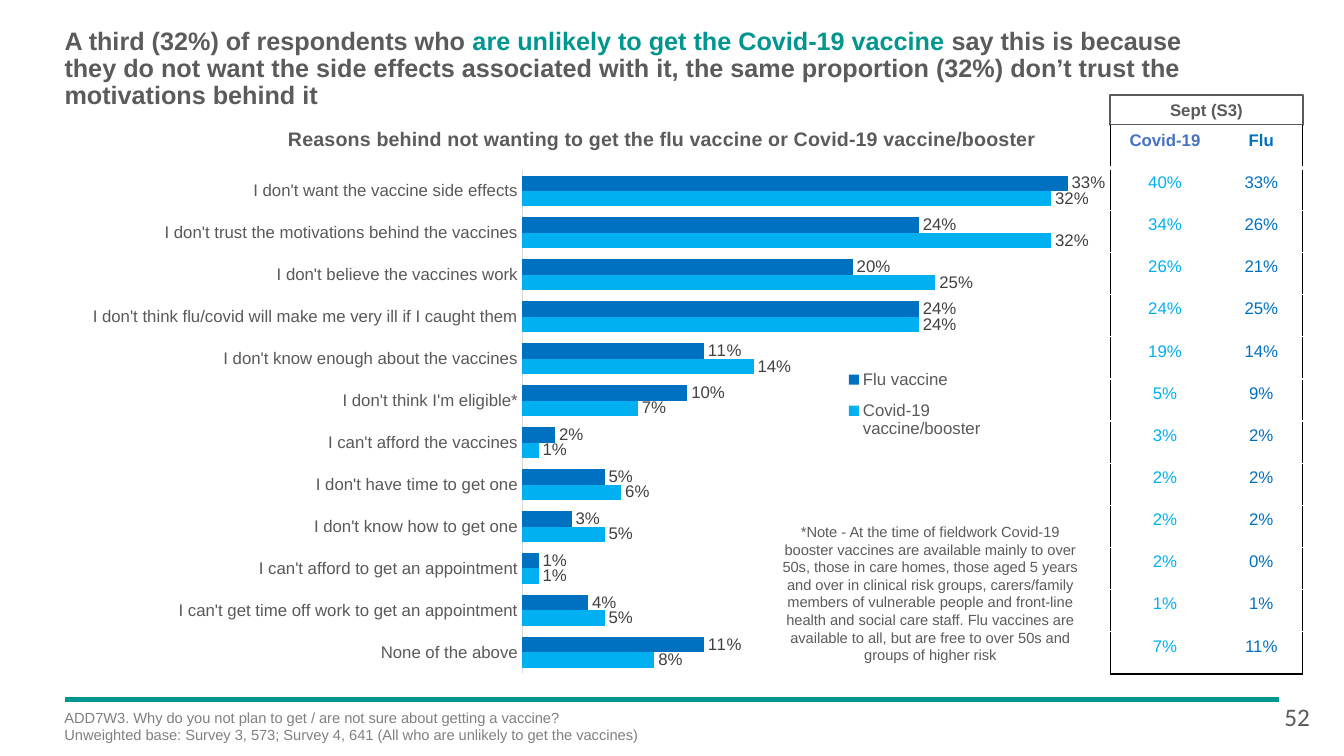
from dataclasses import dataclass

from lxml import etree
from pptx import Presentation
from pptx.chart.data import CategoryChartData
from pptx.dml.color import RGBColor
from pptx.enum.chart import XL_CHART_TYPE, XL_LABEL_POSITION, XL_LEGEND_POSITION, XL_TICK_MARK
from pptx.enum.shapes import MSO_CONNECTOR, MSO_SHAPE
from pptx.enum.text import MSO_ANCHOR, PP_ALIGN
from pptx.oxml import parse_xml
from pptx.oxml.ns import nsdecls, qn
from pptx.util import Inches, Pt

LEFT, CENTER = PP_ALIGN.LEFT, PP_ALIGN.CENTER
TOP, MIDDLE = MSO_ANCHOR.TOP, MSO_ANCHOR.MIDDLE
BAR = XL_CHART_TYPE.BAR_CLUSTERED
OUTSIDE = XL_LABEL_POSITION.OUTSIDE_END
BOTTOM = XL_LEGEND_POSITION.BOTTOM
NO_TICK = XL_TICK_MARK.NONE


@dataclass
class Theme:
    font: str = "Arial"
    number_font: str = "Calibri"
    ink: str = "5C5B5A"
    teal: str = "009690"
    flu: str = "0070C0"
    covid: str = "00B0F0"
    covid_head: str = "4472C4"
    grey: str = "808080"
    axis_text: str = "595959"
    label_text: str = "404040"
    axis_line: str = "D9D9D9"
    white: str = "FFFFFF"
    black: str = "000000"
    title: float = 18
    heading: float = 14
    body: float = 12
    small: float = 10.5


THEME = Theme()


def set_font(font, size=THEME.body, color=THEME.ink, bold=False, name=THEME.font):
    font.size, font.bold, font.name = Pt(size), bold, name
    font.color.rgb = RGBColor.from_string(color)


def write(tf, text, align=LEFT, spacing=None, **style):
    """Write lines of text, each a string or a list of (text, colour) runs."""
    for i, line in enumerate([text] if isinstance(text, str) else text):
        p = tf.paragraphs[0] if i == 0 else tf.add_paragraph()
        p.alignment = align
        if spacing:
            p.line_spacing = spacing
        for part, color in [(line, None)] if isinstance(line, str) else line:
            r = p.add_run()
            r.text = part
            set_font(r.font, **({**style, "color": color} if color else style))


def place(element, index, x, y, w=None, h=None, inner=False):
    for old in element.findall(qn("c:layout")):
        element.remove(old)
    values = [("layoutTarget", "inner")] if inner else []
    values += [("xMode", "edge"), ("yMode", "edge"), ("x", x), ("y", y)]
    values += [("w", w), ("h", h)] if w else []
    items = "".join(f'<c:{tag} val="{value}"/>' for tag, value in values)
    element.insert(index, parse_xml(
        f'<c:layout {nsdecls("c")}><c:manualLayout>{items}</c:manualLayout></c:layout>'))


class SurveySlide:
    """Draw survey elements at percentages of the slide's width and height."""

    def __init__(self, prs, theme):
        self.prs, self.theme = prs, theme
        self.s = prs.slides.add_slide(prs.slide_layouts[6])

    def span(self, *shares):
        sides = (self.prs.slide_width, self.prs.slide_height) * 2
        return [round(side * share / 100) for side, share in zip(sides, shares)]

    def text(self, area, text, insets=(0.1, 0.05, 0.1, 0.05), anchor=TOP, **style):
        tf = self.s.shapes.add_textbox(*self.span(*area)).text_frame
        tf.word_wrap, tf.vertical_anchor = True, anchor
        tf.margin_left, tf.margin_top, tf.margin_right, tf.margin_bottom = map(Inches, insets)
        write(tf, text, **style)

    def rule(self, *ends):
        sp = self.s.shapes.add_connector(MSO_CONNECTOR.STRAIGHT, *self.span(*ends))
        sp.line.color.rgb = RGBColor.from_string(self.theme.teal)
        sp.line.width = Pt(3)
        etree.SubElement(sp._element.spPr, qn("a:effectLst"))

    def frame(self, area, text):
        sp = self.s.shapes.add_shape(MSO_SHAPE.RECTANGLE, *self.span(*area))
        sp.shadow.inherit = False
        sp.fill.background()
        sp.line.color.rgb = RGBColor.from_string(self.theme.ink)
        sp.line.width = Pt(1.5)
        sp.text_frame.vertical_anchor = MIDDLE
        write(sp.text_frame, text, align=CENTER, bold=True)

    def chart(self, area, title, categories, series):
        data = CategoryChartData(number_format="0%")
        data.categories = categories
        for name, values, _ in series:
            data.add_series(name, [value / 100 for value in values])
        chart = self.s.shapes.add_chart(BAR, *self.span(*area), data).chart
        set_font(chart.font, 10, self.theme.black)
        chart.has_title = True
        write(chart.chart_title.text_frame, title, size=self.theme.heading, bold=True)
        place(chart.chart_title._element, 1, 0.2, 0.05)
        chart.has_legend = True
        chart.legend.position = BOTTOM
        chart.legend.include_in_layout = False
        set_font(chart.legend.font, color=self.theme.axis_text)
        place(chart.legend._element, 1, 0.74, 0.45, 0.14, 0.16)
        place(chart._chartSpace.chart.plotArea, 0, 0.43, 0.13, 0.56, 0.86, inner=True)

        axis = chart.category_axis
        axis.major_tick_mark = axis.minor_tick_mark = NO_TICK
        set_font(axis.tick_labels.font, color=self.theme.axis_text)
        axis.format.line.color.rgb = RGBColor.from_string(self.theme.axis_line)
        axis.format.line.width = Pt(0.75)
        axis = chart.value_axis
        axis.has_major_gridlines = axis.visible = False
        axis.minimum_scale, axis.maximum_scale = 0, 0.35

        plot = chart.plots[0]
        plot.gap_width, plot.overlap, plot.vary_by_categories = 75, 0, False
        for bars, (_, _, color) in zip(plot.series, series):
            bars.format.fill.solid()
            bars.format.fill.fore_color.rgb = RGBColor.from_string(color)
            labels = bars.data_labels
            labels.show_value, labels.position = True, OUTSIDE
            labels.number_format, labels.number_format_is_linked = "0%", False
            set_font(labels.font, color=self.theme.label_text)

    def border(self, cell, side, color, width):
        cell._tc.get_or_add_tcPr().append(parse_xml(
            f'<a:ln{side} {nsdecls("a")} w="{Pt(width)}"><a:solidFill>'
            f'<a:srgbClr val="{color}"/></a:solidFill></a:ln{side}>'))

    def table(self, area, widths, heads, rows, head_colors, colors):
        x, y, w, h = self.span(*area)
        table = self.s.shapes.add_table(len(rows) + 1, len(heads), x, y, w, h).table
        table.first_row = table.horz_banding = False
        for column, share in zip(table.columns, widths):
            column.width = round(w * share)
        black, white = self.theme.black, self.theme.white
        for i, row in enumerate([heads, *rows]):
            for j, value in enumerate(row):
                cell = table.cell(i, j)
                self.border(cell, "L", white if j else black, 1)
                self.border(cell, "R", black if j else white, 1)
                self.border(cell, "T", white, 3 if i == 1 else 1)
                self.border(cell, "B", black if i == len(rows) else white, 1 if i else 3)
                cell.fill.solid()
                cell.fill.fore_color.rgb = RGBColor.from_string(white)
                write(cell.text_frame, f"{value}%" if i else value, align=CENTER,
                      color=(colors if i else head_colors)[j], bold=i == 0)


REASONS = [
    ("None of the above", 8, 11),
    ("I can't get time off work to get an appointment", 5, 4),
    ("I can't afford to get an appointment", 1, 1),
    ("I don't know how to get one", 5, 3),
    ("I don't have time to get one", 6, 5),
    ("I can't afford the vaccines", 1, 2),
    ("I don't think I'm eligible*", 7, 10),
    ("I don't know enough about the vaccines", 14, 11),
    ("I don't think flu/covid will make me very ill if I caught them", 24, 24),
    ("I don't believe the vaccines work", 25, 20),
    ("I don't trust the motivations behind the vaccines", 32, 24),
    ("I don't want the vaccine side effects", 32, 33),
]
SEPTEMBER = [(40, 33), (34, 26), (26, 21), (24, 25), (19, 14), (5, 9),
             (3, 2), (2, 2), (2, 2), (2, 0), (1, 1), (7, 11)]


def main():
    prs = Presentation()
    prs.slide_width, prs.slide_height = Inches(13.33), Inches(7.5)
    slide, t = SurveySlide(prs, THEME), THEME
    slide.rule(4.8, 92.53, 95.2, 92.53)
    slide.text((4.8, 3.73, 87, 8.53), [[
        ("A third (32%) of respondents who ", t.ink),
        ("are unlikely to get the Covid-19 vaccine ", t.teal),
        ("say this is because they do not want the side effects associated with it, the same "
         "proportion (32%) don’t trust the motivations behind it", t.ink)]],
        insets=(0, 0, 0, 0), size=t.title, bold=True, spacing=0.9)
    names, covid, flu = zip(*REASONS)
    slide.chart((5.78, 12.4, 76.9, 77.47),
                "Reasons behind not wanting to get the flu vaccine or Covid-19 vaccine/booster",
                names, [("Covid-19 vaccine/booster", covid, t.covid),
                        ("Flu vaccine", flu, t.flu)])
    slide.text((57, 67.07, 24.46, 22.8),
               "*Note - At the time of fieldwork Covid-19 booster vaccines are available mainly to "
               "over 50s, those in care homes, those aged 5 years and over in clinical risk groups, "
               "carers/family members of vulnerable people and front-line health and social care "
               "staff. Flu vaccines are available to all, but are free to over 50s and groups of "
               "higher risk", anchor=MIDDLE, align=CENTER, size=t.small)
    slide.frame((82.6, 12.53, 14.33, 4), "Sept (S3)")
    slide.table((82.6, 16.67, 14.33, 72.53), (0.57, 0.43), ("Covid-19", "Flu"), SEPTEMBER,
                (t.covid_head, t.flu), (t.covid, t.flu))
    slide.text((4.8, 93.73, 90.4, 5.6), [
        "ADD7W3. Why do you not plan to get / are not sure about getting a vaccine?",
        "Unweighted base: Survey 3, 573; Survey 4, 641 (All who are unlikely to get the vaccines)"],
        insets=(0, 0, 0, 0.05), size=t.small, color=t.grey)
    slide.text((94.82, 92.13, 3.98, 5.33), "52", size=t.title, name=t.number_font)
    prs.save("out.pptx")


if __name__ == "__main__":
    main()
